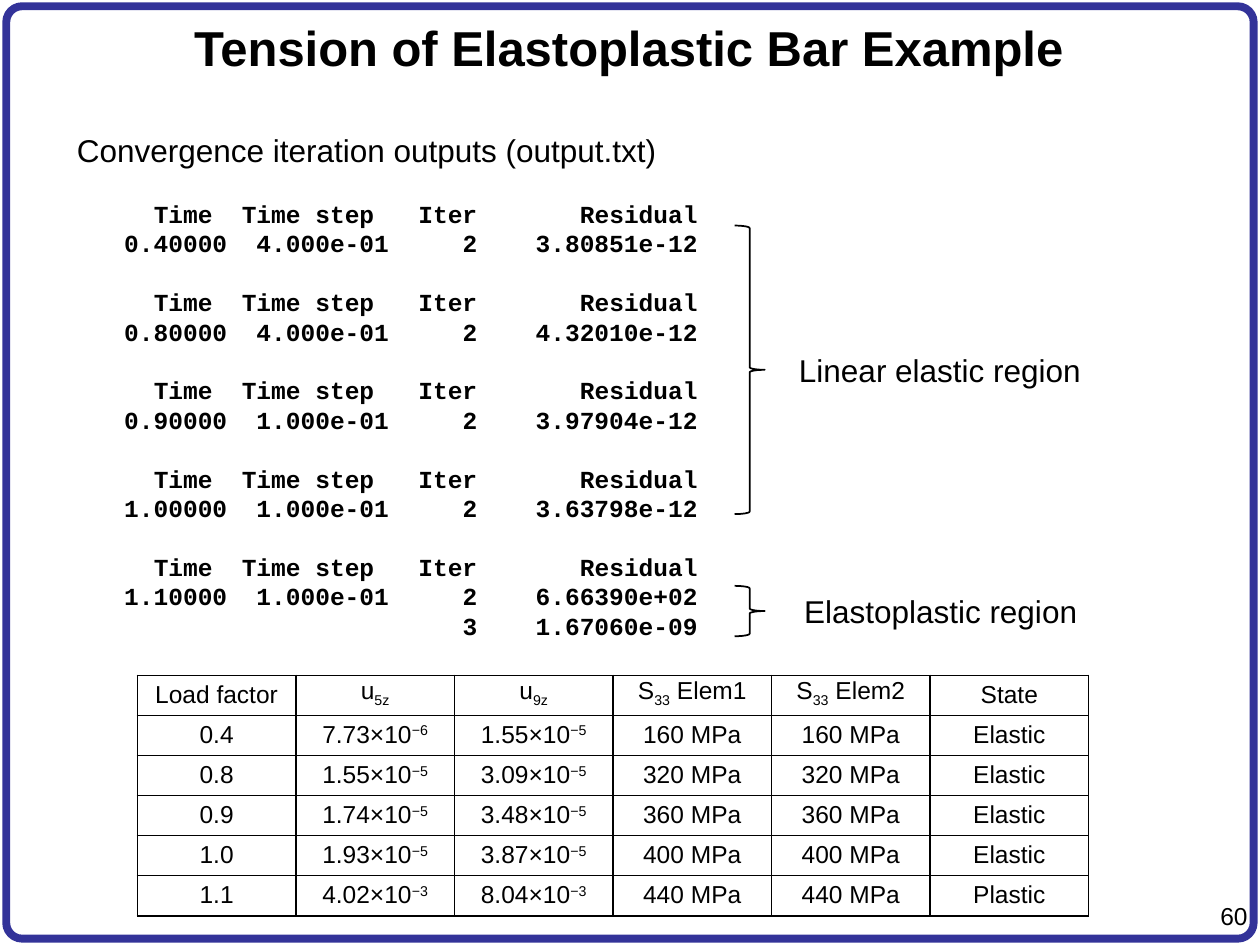
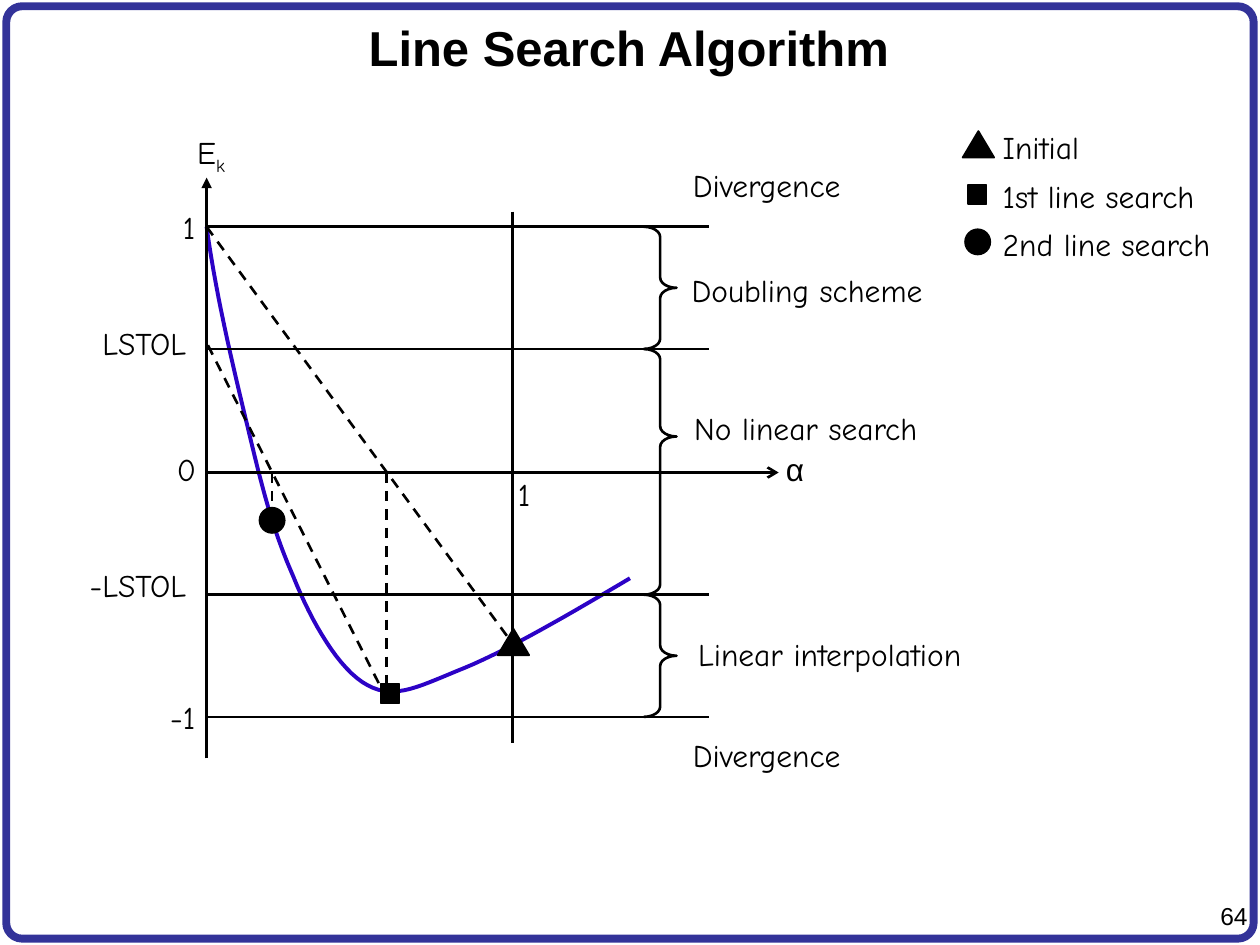
from lxml import etree
from pptx import Presentation
from pptx import util as u
from pptx.dml.color import RGBColor
from pptx.enum import dml, shapes, text
from pptx.oxml.ns import qn

COLOURS = {"frame": "333399", "ink": "000000", "curve": "2C02C6"}
SHAPE, ALIGN = shapes.MSO_SHAPE, text.PP_ALIGN
HAND = "Comic Neue"
BASELINES = {"^": "30000", "_": "-25000"}


def write(frame, lines, font=None, paragraphs=None):
    """Fill a frame; '|' separates runs, and '^' or '_' raises or lowers one."""
    font_format = {"size": u.Pt(18), "name": "Arial", "bold": False, **(font or {})}
    paragraph_format = {"alignment": ALIGN.CENTER, **(paragraphs or {})}
    for index, line in enumerate(lines):
        paragraph = frame.add_paragraph() if index else frame.paragraphs[0]
        for name, value in paragraph_format.items():
            setattr(paragraph, name, value)
        for piece in line.split("|"):
            run = paragraph.add_run()
            run.text = piece.lstrip("^_")
            for name, value in font_format.items():
                setattr(run.font, name, value)
            run.font.color.rgb = RGBColor.from_string(COLOURS["ink"])
            if piece[0] in BASELINES:
                run._r.get_or_add_rPr().set("baseline", BASELINES[piece[0]])


def outline(shape, width, colour="ink", dashed=False, arrow=None):
    """Give a shape or connector its line and take its shadow away."""
    shape.line.color.rgb = RGBColor.from_string(COLOURS[colour])
    shape.line.width = u.Pt(width)
    if dashed:
        shape.line.dash_style = dml.MSO_LINE.DASH
    properties = shape._element.spPr
    if arrow:
        etree.SubElement(properties.find(qn("a:ln")), qn("a:tailEnd"), type=arrow)
    etree.SubElement(properties, qn("a:effectLst"))


presentation = Presentation()
presentation.slide_width, presentation.slide_height = u.Inches(10), u.Inches(7.5)

# Frame, title and number on every slide
slides = []
for title_text, number in [("Tension of Elastoplastic Bar Example", "60"),
                           ("Line Search Algorithm", "64")]:
    slide = presentation.slides.add_slide(presentation.slide_layouts[5])
    slides.append(slide)
    frame = slide.shapes.add_shape(SHAPE.ROUNDED_RECTANGLE, u.Inches(0.05), u.Inches(0.05),
                                   u.Inches(9.9), u.Inches(7.4))
    frame.adjustments[0] = 0.017
    frame.fill.background()
    outline(frame, 4.5, "frame")
    title = slide.shapes.title
    for name, value in {"left": 0.04, "top": 0.05, "width": 9.9, "height": 0.65}.items():
        setattr(title, name, u.Inches(value))
    title.text_frame.vertical_anchor = text.MSO_ANCHOR.MIDDLE
    write(title.text_frame, [title_text], {"size": u.Pt(28), "bold": True})
    number_box = slide.shapes.add_textbox(u.Inches(9.46), u.Inches(7.1),
                                          u.Inches(0.54), u.Inches(0.33))
    number_box.text_frame.word_wrap = True
    write(number_box.text_frame, [number], {"size": u.Pt(14)}, {"alignment": ALIGN.RIGHT})

bar_slide, search_slide = slides

# Labels of both slides: slide, text, font, left, top, width
labels = [
    (bar_slide, "Convergence iteration outputs (output.txt)", "Arial", 0.49, 0.99, 4.84),
    (bar_slide, "Linear elastic region", "Arial", 6.23, 2.74, 2.46),
    (bar_slide, "Elastoplastic region", "Arial", 6.27, 4.65, 2.39),
    (search_slide, "E|_k", HAND, 1.45, 1.01, 0.45),
    (search_slide, "1", HAND, 1.34, 1.6, 0.32),
    (search_slide, "LSTOL", HAND, 0.63, 2.52, 1.03),
    (search_slide, "0", HAND, 1.3, 3.52, 0.36),
    (search_slide, "-LSTOL", HAND, 0.53, 4.44, 1.13),
    (search_slide, "-1", HAND, 1.24, 5.49, 0.42),
    (search_slide, "1", HAND, 4, 3.72, 0.32),
    (search_slide, "α", "Arial", 6.13, 3.52, 0.36),
    (search_slide, "Divergence", HAND, 5.33, 1.27, 1.51),
    (search_slide, "Doubling scheme", HAND, 5.33, 2.1, 2.15),
    (search_slide, "No linear search", HAND, 5.33, 3.2, 2.13),
    (search_slide, "Linear interpolation", HAND, 5.33, 4.99, 2.51),
    (search_slide, "Divergence", HAND, 5.33, 5.79, 1.51),
]
for slide, label, font_name, left, top, width in labels:
    box = slide.shapes.add_textbox(u.Inches(left), u.Inches(top), u.Inches(width), u.Inches(0.4))
    box.text_frame.word_wrap = False
    write(box.text_frame, [label], {"name": font_name})

# Braces of both slides: slide, left, top, width, height, line width, adjustments
braces = [
    (bar_slide, 5.83, 1.79, 0.24, 2.29, 1, (0.083, 0.5)),
    (bar_slide, 5.83, 4.65, 0.24, 0.4, 1, (0.083, 0.5)),
    (search_slide, 5.11, 1.8, 0.26, 0.97, 1.5, (0.314, 0.5)),
    (search_slide, 5.11, 2.77, 0.26, 1.95, 1.5, (0.314, 0.45)),
    (search_slide, 5.11, 4.72, 0.26, 0.97, 1.5, (0.314, 0.5)),
]
braces[3] = braces[3][:-1] + ((0.314, 0.356),)
for slide, left, top, width, height, line_width, adjustments in braces:
    brace = slide.shapes.add_shape(SHAPE.RIGHT_BRACE, u.Inches(left), u.Inches(top),
                                   u.Inches(width), u.Inches(height))
    for index, value in enumerate(adjustments):
        brace.adjustments[index] = value
    brace.fill.background()
    outline(brace, line_width)

# Iteration log: columns end at right tab stops, counted in characters
CHARACTER = 8.4 / 72
HEADER_STOPS, VALUE_STOPS = (9, 20, 27, 42), (10, 21, 27, 42)
steps = [
    ("0.40000", "4.000e-01", "2", "3.80851e-12"),
    ("0.80000", "4.000e-01", "2", "4.32010e-12"),
    ("0.90000", "1.000e-01", "2", "3.97904e-12"),
    ("1.00000", "1.000e-01", "2", "3.63798e-12"),
    ("1.10000", "1.000e-01", "2", "6.66390e+02"),
]
log_rows = []
for step in steps:
    log_rows += [(("Time", "Time step", "Iter", "Residual"), HEADER_STOPS), (step, VALUE_STOPS)]
log_rows.append((("3", "1.67060e-09"), VALUE_STOPS[2:]))
log_box = bar_slide.shapes.add_textbox(u.Inches(0.54), u.Inches(1.53),
                                       u.Inches(5.25), u.Inches(3.64))
log_box.text_frame.word_wrap = True
write(log_box.text_frame, ["\t" + "\t".join(values) for values, stops in log_rows],
      {"size": u.Pt(14), "name": "Courier New", "bold": True},
      {"alignment": ALIGN.LEFT, "line_spacing": u.Pt(16.8)})
for index, (paragraph, (values, stops)) in enumerate(zip(log_box.text_frame.paragraphs, log_rows)):
    if index and stops == HEADER_STOPS:
        paragraph.space_before = u.Pt(16.8)
    tab_list = etree.SubElement(paragraph._p.get_or_add_pPr(), qn("a:tabLst"))
    for stop in stops:
        etree.SubElement(tab_list, qn("a:tab"), pos=str(u.Inches(stop * CHARACTER)), algn="r")

# Results table
results = [
    ("Load factor", "u|_5z", "u|_9z", "S|_33| Elem1", "S|_33| Elem2", "State"),
    ("0.4", "7.73×10|^−6", "1.55×10|^−5", "160 MPa", "160 MPa", "Elastic"),
    ("0.8", "1.55×10|^−5", "3.09×10|^−5", "320 MPa", "320 MPa", "Elastic"),
    ("0.9", "1.74×10|^−5", "3.48×10|^−5", "360 MPa", "360 MPa", "Elastic"),
    ("1.0", "1.93×10|^−5", "3.87×10|^−5", "400 MPa", "400 MPa", "Elastic"),
    ("1.1", "4.02×10|^−3", "8.04×10|^−3", "440 MPa", "440 MPa", "Plastic"),
]
table = bar_slide.shapes.add_table(len(results), len(results[0]), u.Inches(1.09), u.Inches(5.36),
                                   u.Inches(7.55), u.Inches(1.91)).table
table.first_row = table.horz_banding = False
cell_format = {"margin_left": u.Inches(0.07), "margin_right": u.Inches(0.07), "margin_top": 0,
               "margin_bottom": 0, "vertical_anchor": text.MSO_ANCHOR.MIDDLE}
for row_index, row in enumerate(results):
    for column_index, value in enumerate(row):
        cell = table.cell(row_index, column_index)
        for name, setting in cell_format.items():
            setattr(cell, name, setting)
        write(cell.text_frame, [value], {"size": u.Pt(14)}, {"line_spacing": u.Pt(15)})
        for side in ("lnL", "lnR", "lnT", "lnB"):
            border = etree.SubElement(cell._tc.get_or_add_tcPr(), qn("a:" + side),
                                      w=str(u.Pt(1)))
            fill = etree.SubElement(border, qn("a:solidFill"))
            etree.SubElement(fill, qn("a:srgbClr"), val=COLOURS["ink"])
        cell.fill.background()

# Search curve: start point, then three control points per Bézier segment
curve = [(1.64, 1.8), (1.72, 2.39), (1.88, 3.03), (1.99, 3.49), (2.1, 3.95), (2.18, 4.24),
         (2.33, 4.58), (2.47, 4.93), (2.69, 5.32), (2.92, 5.44), (3.14, 5.56), (3.34, 5.44),
         (3.69, 5.3), (4.03, 5.16), (4.53, 4.87), (5, 4.59)]
SAMPLES = 16
points = []
for first in range(0, len(curve) - 1, 3):
    controls = curve[first:first + 4]
    for sample in range(1, SAMPLES + 1):
        t = sample / SAMPLES
        weights = ((1 - t) ** 3, 3 * t * (1 - t) ** 2, 3 * t * t * (1 - t), t ** 3)
        points.append([u.Inches(sum(weight * point[axis] for weight, point in
                                    zip(weights, controls))) for axis in (0, 1)])
builder = search_slide.shapes.build_freeform(u.Inches(1.64), u.Inches(1.8))
builder.add_line_segments(points, close=False)
search_curve = builder.convert_to_shape()
search_curve.fill.background()
outline(search_curve, 2.25, "curve")

# Axes, levels and dashed search lines: from x, y to x, y, dashed, arrow
lines = [(1.63, 3.75, 6.18, 3.75, False, "arrow"),
         (1.64, 6.02, 1.64, 1.41, False, "triangle"),
         (4.07, 1.68, 4.07, 5.9, False, None)]
lines += [(1.63, level, 5.63, level, False, None) for level in (1.8, 2.77, 4.72, 5.69)]
lines += [(*ends, True, None) for ends in [(1.64, 1.8, 4.07, 5.11), (3.07, 3.75, 3.07, 5.49),
                                           (1.65, 2.74, 3.05, 5.51), (2.16, 3.75, 2.16, 4.13)]]
for *ends, dashed, arrow in lines:
    connector = search_slide.shapes.add_connector(shapes.MSO_CONNECTOR.STRAIGHT,
                                                  *[u.Inches(value) for value in ends])
    outline(connector, 1.5, dashed=dashed, arrow=arrow)

# Markers: kind, width, height, place on the curve, place in the legend
markers = [
    (SHAPE.ISOSCELES_TRIANGLE, 0.25, 0.21, (3.95, 4.99), (7.64, 1.04)),
    (SHAPE.RECTANGLE, 0.15, 0.15, (3.02, 5.43), (7.68, 1.47)),
    (SHAPE.OVAL, 0.2, 0.2, (2.06, 4.03), (7.66, 1.82)),
]
for kind, width, height, *places in markers:
    for left, top in places:
        marker = search_slide.shapes.add_shape(kind, u.Inches(left), u.Inches(top),
                                               u.Inches(width), u.Inches(height))
        marker.fill.solid()
        marker.fill.fore_color.rgb = RGBColor.from_string(COLOURS["ink"])
        outline(marker, 1)

# Legend text
legend = search_slide.shapes.add_textbox(u.Inches(7.86), u.Inches(0.97),
                                         u.Inches(1.98), u.Inches(1.18))
legend.text_frame.word_wrap = False
write(legend.text_frame, ["Initial", "1st line search", "2nd line search"], {"name": HAND},
      {"alignment": ALIGN.LEFT, "space_before": u.Pt(6)})

presentation.save("out.pptx")
